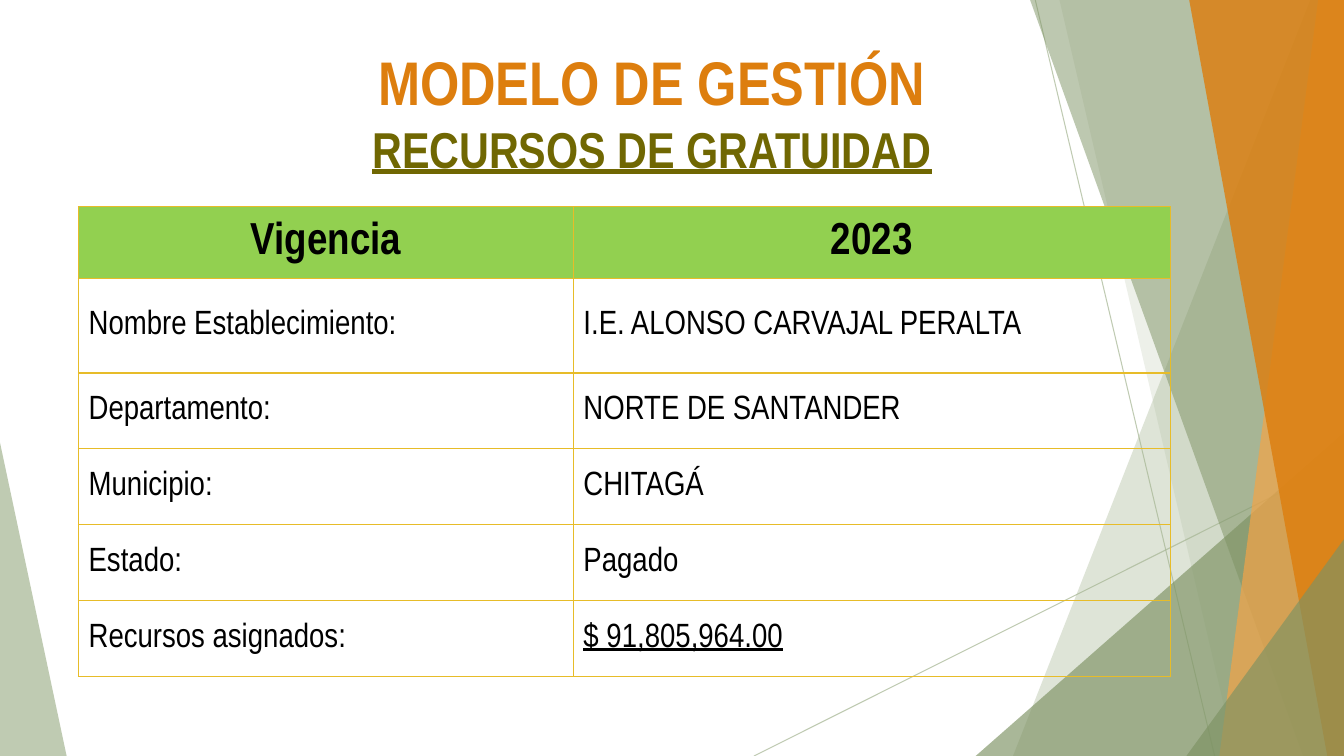
"""Build the slide on the free-tuition resources of the management model."""
import lxml.etree
import pptx
import pptx.dml.color
import pptx.enum.shapes
import pptx.enum.text
import pptx.oxml.ns
import pptx.util

Cm, Pt = pptx.util.Cm, pptx.util.Pt
RGBColor = pptx.dml.color.RGBColor
qn = pptx.oxml.ns.qn

SAGE = RGBColor(0xA5, 0xB5, 0x92)
MOSS = RGBColor(0x7D, 0x92, 0x63)
APRICOT = RGBColor(0xF3, 0xA4, 0x47)
ORANGE = RGBColor(0xDD, 0x7E, 0x0E)
OLIVE = RGBColor(0x70, 0x67, 0x02)
LIME = RGBColor(0x92, 0xD0, 0x50)
GOLD = RGBColor(0xE7, 0xBC, 0x29)
BLACK = RGBColor(0, 0, 0)
FONT = "Arial Narrow"

WIDTH, HEIGHT = 33.87, 19.05
HEADING = [
    ("MODELO DE GESTIÓN", 44, ORANGE, False),
    ("RECURSOS DE GRATUIDAD", 36, OLIVE, True),
]
RECORD = [
    ("Vigencia", "2023"),
    ("Nombre Establecimiento:", "I.E. ALONSO CARVAJAL PERALTA"),
    ("Departamento:", "NORTE DE SANTANDER"),
    ("Municipio:", "CHITAGÁ"),
    ("Estado:", "Pagado"),
    ("Recursos asignados:", "$ 91,805,964.00"),
]
COLUMN_WIDTHS = [12.47, 15.04]
ROW_HEIGHTS = [1.8, 2.39] + [1.91] * 4

LEFT_WEDGE = ([(0, 11.15), (1.68, HEIGHT), (0, HEIGHT)], SAGE, 70)
RAYS = [((19, HEIGHT), (WIDTH, 11.61)), ((26.09, 0), (30.61, HEIGHT))]


def band(top, bottom):
    """Return the corners of a band reaching the right edge of the slide."""
    return [(top, 0), (bottom, HEIGHT), (WIDTH, HEIGHT), (WIDTH, 0)]


def corner(left, top):
    """Return the corners of a triangle in the bottom right of the slide."""
    return [(left, HEIGHT), (WIDTH, top), (WIDTH, HEIGHT)]


RIGHT_PANELS = [
    (band(33.02, 25.53), SAGE, 36),
    (band(26.7, 31.14), SAGE, 20),
    (corner(24.59, 10.9), MOSS, 66),
    (band(25.96, 32.84), MOSS, 50),
    (band(33.22, 30.73), APRICOT, 70),
    (band(29.97, 33.45), ORANGE, 82),
    (corner(29.9, 13.59), MOSS, 66),
]


def set_opacity(shape, percent):
    """Apply an opacity to the explicit colour of a shape."""
    for color in shape._element.spPr.iter(qn("a:srgbClr")):
        lxml.etree.SubElement(color, qn("a:alpha"), val=str(percent * 1000))


def draw_panel(shapes, corners, color, opacity):
    """Draw one translucent polygon."""
    points = [(Cm(x), Cm(y)) for x, y in corners]
    outline = shapes.build_freeform(*points[0], scale=1.0)
    outline.add_line_segments(points[1:], close=True)
    panel = outline.convert_to_shape()
    panel.shadow.inherit = False
    panel.fill.solid()
    panel.fill.fore_color.rgb = color
    panel.line.fill.background()
    set_opacity(panel, opacity)


def draw_ray(shapes, start, end):
    """Draw one thin translucent line."""
    ray = shapes.add_connector(
        pptx.enum.shapes.MSO_CONNECTOR.STRAIGHT, *map(Cm, start + end))
    ray.line.color.rgb = SAGE
    ray.line.width = Pt(0.75)
    set_opacity(ray, 70)
    lxml.etree.SubElement(ray._element.spPr, qn("a:effectLst"))


def draw_borders(cell):
    """Give a cell a gold border on every side."""
    properties = cell._tc.get_or_add_tcPr()
    for side in ("lnL", "lnR", "lnT", "lnB"):
        border = lxml.etree.SubElement(properties, qn(f"a:{side}"), w=str(Pt(1)))
        fill = lxml.etree.SubElement(border, qn("a:solidFill"))
        lxml.etree.SubElement(fill, qn("a:srgbClr"), val=str(GOLD))


def fill_cell(cell, text, is_header, is_amount):
    """Write and format one cell of the record."""
    draw_borders(cell)
    if is_header:
        cell.fill.solid()
        cell.fill.fore_color.rgb = LIME
    else:
        cell.fill.background()
    cell.vertical_anchor = pptx.enum.text.MSO_ANCHOR.MIDDLE
    cell.text = text
    paragraph = cell.text_frame.paragraphs[0]
    align = pptx.enum.text.PP_ALIGN
    paragraph.alignment = align.CENTER if is_header else align.LEFT
    paragraph.font.name = FONT
    paragraph.font.size = Pt(32 if is_header else 24)
    paragraph.font.bold = is_header
    paragraph.font.underline = is_amount
    paragraph.font.color.rgb = BLACK


def add_record(shapes):
    """Add the table with the assigned resources."""
    record = shapes.add_table(
        len(RECORD), len(COLUMN_WIDTHS), Cm(1.98), Cm(5.21),
        Cm(sum(COLUMN_WIDTHS)), Cm(sum(ROW_HEIGHTS))).table
    record.first_row = record.horz_banding = False
    for column, width in zip(record.columns, COLUMN_WIDTHS):
        column.width = Cm(width)
    for r, (row, height) in enumerate(zip(record.rows, ROW_HEIGHTS)):
        row.height = Cm(height)
        for c, text in enumerate(RECORD[r]):
            fill_cell(row.cells[c], text, r == 0, text.startswith("$"))


def write_heading(shapes):
    """Place and format the two-line title in front of the decoration."""
    title = shapes.title
    title.left, title.top = Cm(5.66), Cm(0.79)
    title.width, title.height = Cm(21.54), Cm(4.04)
    title.text_frame.vertical_anchor = pptx.enum.text.MSO_ANCHOR.MIDDLE
    paragraph = title.text_frame.paragraphs[0]
    paragraph.alignment = pptx.enum.text.PP_ALIGN.CENTER
    paragraph.font.name = FONT
    paragraph.font.bold = True
    for i, (text, size, color, underlined) in enumerate(HEADING):
        if i:
            paragraph.add_line_break()
        run = paragraph.add_run()
        run.text = text
        run.font.size = Pt(size)
        run.font.color.rgb = color
        run.font.underline = underlined
    shapes._spTree.append(title._element)


def main():
    """Assemble and save the slide."""
    deck = pptx.Presentation()
    deck.slide_width, deck.slide_height = Cm(WIDTH), Cm(HEIGHT)
    shapes = deck.slides.add_slide(deck.slide_layouts[5]).shapes
    draw_panel(shapes, *LEFT_WEDGE)
    for start, end in RAYS:
        draw_ray(shapes, start, end)
    for panel in RIGHT_PANELS:
        draw_panel(shapes, *panel)
    add_record(shapes)
    write_heading(shapes)
    deck.save("out.pptx")


if __name__ == "__main__":
    main()
